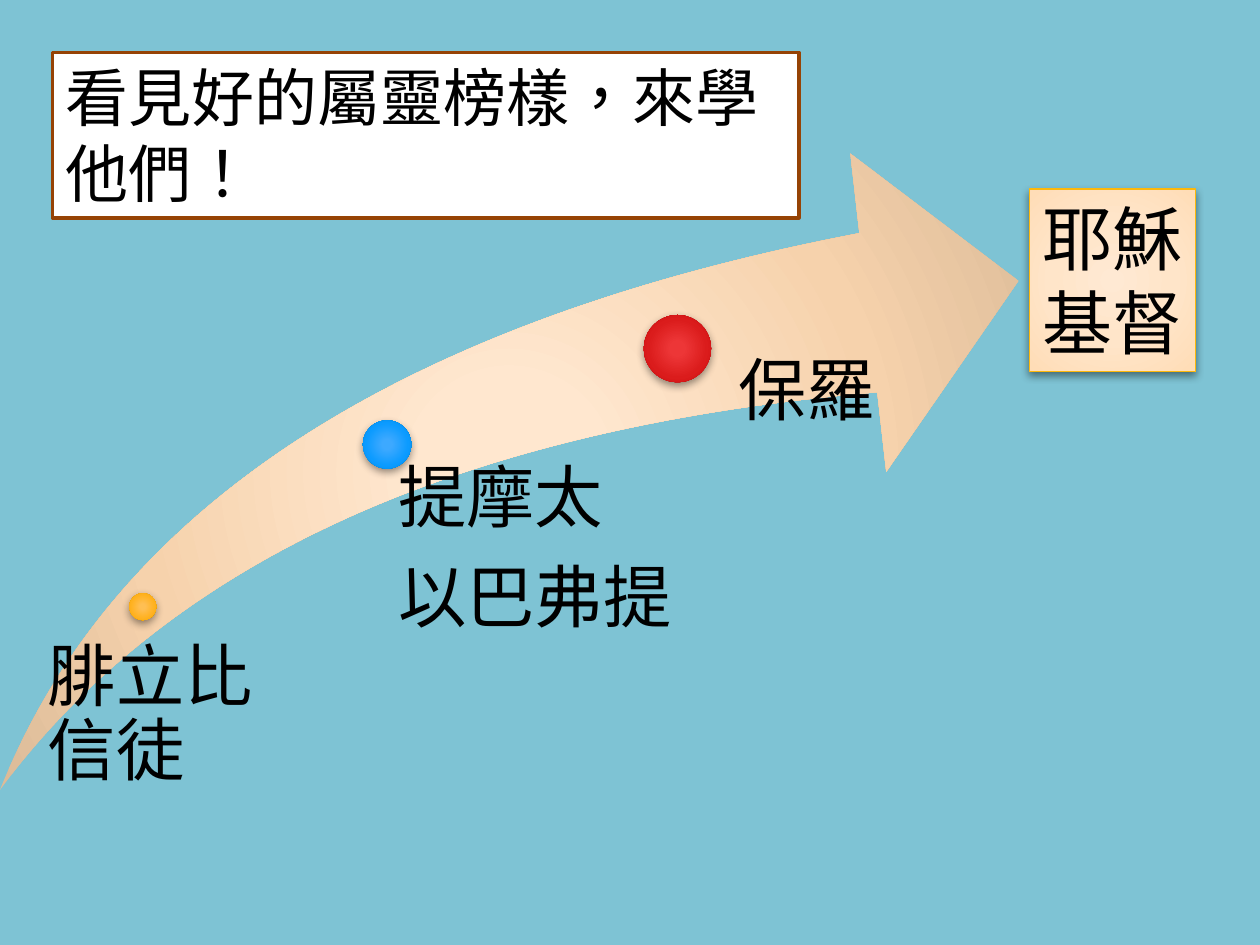
import pptx
import pptx.util
import pptx.oxml
import pptx.oxml.ns
import pptx.dml.color
import pptx.enum.text
import pptx.enum.lang
import pptx.enum.shapes

Pt = pptx.util.Pt
RGB = pptx.dml.color.RGBColor.from_string
Kind = pptx.enum.shapes.MSO_SHAPE
Align = pptx.enum.text.PP_ALIGN
Fit = pptx.enum.text.MSO_AUTO_SIZE
Top = pptx.enum.text.MSO_ANCHOR.TOP


class Theme:
    font = "Roboto"
    ink = "000000"
    back = "7EC3D4"
    white = "FFFFFF"
    brown = "964305"
    gold = "FEB80A"
    head, label, goal = 36, 39, 40
    stops = (0, 15, 62, 97, 100)
    arrow = ("FFE8D1", "FFE7CF", "F6D2AC", "DEBD9A", "DDBB98")
    amber = ("FFBF54", "FFBF53", "FFB221", "F6A500", "D69900")
    blue = ("3EAAFF", "3DA9FF", "0C9BFF", "008BE4", "0084CD")
    red = ("EF3737", "ED3637", "DB1C1C", "C70C0D", "C30001")
    cream = ("FFE9D3", "FFE5C9", "FFDDB7", "FFDBB2")


def glow(kind, box, tints, stops=Theme.stops, shade=True):
    """Add a shape with a radial gradient and, if wanted, a soft shadow."""
    shape = slide.shapes.add_shape(kind, *map(Pt, box))
    shape.line.fill.background()
    shape.shadow.inherit = False
    shape.fill.solid()
    names = pptx.oxml.ns.nsdecls("a")
    marks = "".join(
        f'<a:gs pos="{stop * 1000}"><a:srgbClr val="{tint}"/></a:gs>'
        for stop, tint in zip(stops, tints))
    grad = pptx.oxml.parse_xml(
        f'<a:gradFill {names} rotWithShape="1"><a:gsLst>{marks}</a:gsLst>'
        '<a:path path="circle"><a:fillToRect l="50000" t="50000" '
        'r="50000" b="50000"/></a:path></a:gradFill>')
    props = shape.element.spPr
    props.replace(props.find(pptx.oxml.ns.qn("a:solidFill")), grad)
    if shade:
        props.find(pptx.oxml.ns.qn("a:effectLst")).append(pptx.oxml.parse_xml(
            f'<a:outerShdw {names} blurRad="{Pt(5)}" dist="{Pt(2)}" '
            'dir="5400000" rotWithShape="0"><a:srgbClr val="000000">'
            '<a:alpha val="43000"/></a:srgbClr></a:outerShdw>'))
    return shape


def write(frame, lines, size, align=Align.LEFT):
    """Fill a text frame, one run to a paragraph; return the paragraphs."""
    frame.vertical_anchor = Top
    for i, line in enumerate(lines):
        para = frame.add_paragraph() if i else frame.paragraphs[0]
        para.alignment = align
        run = para.add_run()
        run.text = line
        run.font.name = Theme.font
        run.font.size = Pt(size)
        run.font.color.rgb = RGB(Theme.ink)
        run.font.language_id = pptx.enum.lang.MSO_LANGUAGE_ID.TRADITIONAL_CHINESE
    return frame.paragraphs


deck = pptx.Presentation()
deck.slide_width, deck.slide_height = Pt(720), Pt(540)
slide = deck.slides.add_slide(deck.slide_layouts[5])
slide.background.fill.solid()
slide.background.fill.fore_color.rgb = RGB(Theme.back)

# Heading
title = slide.shapes.title
title.left, title.top, title.width, title.height = map(Pt, (30, 30, 426.5, 94.5))
title.fill.solid()
title.fill.fore_color.rgb = RGB(Theme.white)
title.line.color.rgb = RGB(Theme.brown)
title.line.width = Pt(2)
title.text_frame.auto_size = Fit.NONE
write(title.text_frame, ["看見好的屬靈榜樣，來學他們！"], Theme.head)

# Rising arrow
arrow = glow(Kind.SWOOSH_ARROW, (0, 87.8, 582, 363.6), Theme.arrow, shade=False)
arrow.adjustments[0] = arrow.adjustments[1] = 0.25

# Steps: dot left, top, size, tints; label box, left inset, lines
steps = [
    (73.9, 339, 15.4, Theme.amber, (19.4, 367.2, 135.4, 105), 8, ["腓立比信徒"]),
    (207.4, 240.2, 27.6, Theme.blue, (213.1, 265, 184.3, 112.3), 14.6,
     ["提摩太", "以巴弗提"]),
    (367.9, 180, 38.4, Theme.red, (401.8, 203.8, 122.4, 52.6), 20.3, ["保羅"]),
]
for left, top, size, tints, box, inset, lines in steps:
    glow(Kind.OVAL, (left, top, size, size), tints)
    frame = slide.shapes.add_textbox(*map(Pt, box)).text_frame
    frame.word_wrap = True
    frame.margin_left = Pt(inset)
    frame.margin_top = frame.margin_right = frame.margin_bottom = 0
    for para in write(frame, lines, Theme.label):
        para.line_spacing = 0.9
        para.space_after = Pt(15)

# Goal
goal = glow(Kind.RECTANGLE, (588.2, 108, 95, 104.4), Theme.cream, (0, 50, 97, 100))
goal.line.color.rgb = RGB(Theme.gold)
goal.line.width = Pt(0.75)
goal.text_frame.word_wrap = False
goal.text_frame.auto_size = Fit.SHAPE_TO_FIT_TEXT
write(goal.text_frame, ["耶穌", "基督"], Theme.goal, Align.CENTER)

deck.save("out.pptx")
